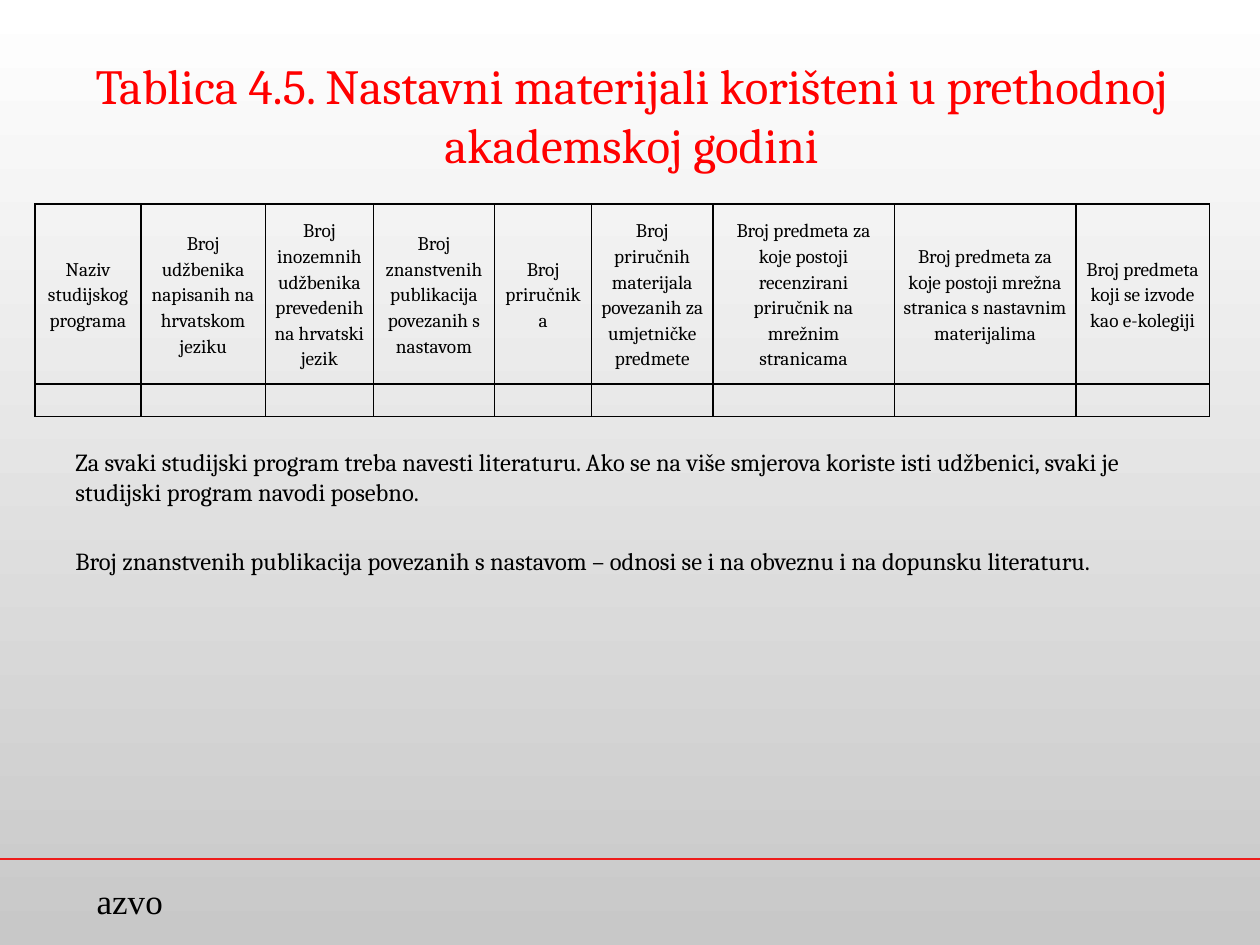
from lxml.etree import SubElement
from pptx import Presentation
from pptx.dml.color import RGBColor
from pptx.enum.shapes import MSO_CONNECTOR
from pptx.enum.text import MSO_ANCHOR as Anchor, PP_ALIGN as Align
from pptx.oxml.ns import qn
from pptx.util import Cm, Pt

COLORS = {
    "top": "FFFFFF",
    "bottom": "C8C8C8",
    "title": "FF0000",
    "rule": "EE1C1B",
    "text": "000000",
}
SERIF = "Cambria"
TITLE = "Tablica 4.5. Nastavni materijali korišteni u prethodnoj akademskoj godini"
COLUMNS = [
    ("Naziv studijskog programa", 2.13),
    ("Broj udžbenika napisanih na hrvatskom jeziku", 2.51),
    ("Broj inozemnih udžbenika prevedenih na hrvatski jezik", 2.18),
    ("Broj znanstvenih publikacija povezanih s nastavom", 2.44),
    ("Broj priručnika", 1.96),
    ("Broj priručnih materijala povezanih za umjetničke predmete", 2.44),
    ("Broj predmeta za koje postoji recenzirani priručnik na mrežnim stranicama", 3.66),
    ("Broj predmeta za koje postoji mrežna stranica s nastavnim materijalima", 3.66),
    ("Broj predmeta koji se izvode kao e-kolegiji", 2.69),
]
ROW_HEIGHTS = [3.63, 0.66]
NOTES = [
    "Za svaki studijski program treba navesti literaturu. Ako se na više smjerova "
    "koriste isti udžbenici, svaki je studijski program navodi posebno.",
    "Broj znanstvenih publikacija povezanih s nastavom – odnosi se i na obveznu "
    "i na dopunsku literaturu.",
]


def rgb(name):
    """Return the named colour."""
    return RGBColor.from_string(COLORS[name])


def style_font(font, size, color="text", face=SERIF):
    """Set size, colour and typeface of a font."""
    font.size, font.name = Pt(size), face
    font.color.rgb = rgb(color)


def paint_background(slide):
    """Fill the slide with a vertical gradient."""
    fill = slide.background.fill
    fill.gradient()
    fill.gradient_angle = 270
    for stop, name in zip(fill.gradient_stops, ("top", "bottom")):
        stop.color.rgb = rgb(name)


def add_text(slide, box, lines, size, color="text", face=SERIF,
             align=Align.LEFT, anchor=Anchor.TOP, gap=0, wrap=True):
    """Add a text box with one paragraph per line."""
    frame = slide.shapes.add_textbox(*map(Cm, box)).text_frame
    frame.word_wrap, frame.vertical_anchor = wrap, anchor
    frame.text = "\n".join(lines)
    for index, paragraph in enumerate(frame.paragraphs):
        paragraph.alignment = align
        if index:
            paragraph.space_before = Pt(gap)
        style_font(paragraph.font, size, color, face)


def add_rule(slide, y):
    """Add the footer line across the slide."""
    rule = slide.shapes.add_connector(MSO_CONNECTOR.STRAIGHT, 0, Cm(y), Cm(25.4), Cm(y))
    rule.line.color.rgb = rgb("rule")
    rule.line.width = Pt(1)
    SubElement(rule._element.spPr, qn("a:effectLst"))


def add_borders(cell):
    """Draw a thin line on each side of a cell."""
    properties = cell._tc.get_or_add_tcPr()
    for position, side in enumerate(("lnL", "lnR", "lnT", "lnB")):
        border = properties.makeelement(qn(f"a:{side}"), {"w": str(Pt(1))})
        fill = SubElement(border, qn("a:solidFill"))
        SubElement(fill, qn("a:srgbClr"), val=COLORS["text"])
        properties.insert(position, border)


def fill_cell(cell, text):
    """Write and format one table cell."""
    cell.text = text
    cell.fill.background()
    cell.vertical_anchor = Anchor.MIDDLE
    cell.margin_left = cell.margin_right = Cm(0.18)
    cell.margin_top = cell.margin_bottom = 0
    paragraph = cell.text_frame.paragraphs[0]
    paragraph.alignment = Align.CENTER
    paragraph.line_spacing = 1.15
    paragraph.space_after = Pt(10)
    style_font(paragraph.font, 11)
    add_borders(cell)


def add_materials_table(slide, left, top):
    """Add the table of teaching materials with an empty row to fill in."""
    width = sum(column_width for _, column_width in COLUMNS)
    table = slide.shapes.add_table(
        len(ROW_HEIGHTS), len(COLUMNS),
        Cm(left), Cm(top), Cm(width), Cm(sum(ROW_HEIGHTS))).table
    table.first_row = table.horz_banding = False
    for row, height in zip(table.rows, ROW_HEIGHTS):
        row.height = Cm(height)
    for index, (heading, column_width) in enumerate(COLUMNS):
        table.columns[index].width = Cm(column_width)
        fill_cell(table.cell(0, index), heading)
        fill_cell(table.cell(1, index), "")


def main():
    """Build and save the slide."""
    presentation = Presentation()
    presentation.slide_width, presentation.slide_height = Cm(25.4), Cm(19.05)
    slide = presentation.slides.add_slide(presentation.slide_layouts[6])
    paint_background(slide)
    add_rule(slide, 17.32)
    add_text(slide, (1.7, 17.6, 2.21, 1.09), ["azvo"], 20,
             face="Times New Roman", wrap=False)
    add_text(slide, (1.3, 0.71, 22.86, 3.18), [TITLE], 28, "title",
             align=Align.CENTER, anchor=Anchor.MIDDLE)
    add_text(slide, (1.27, 8.89, 22.86, 3.6), NOTES, 14, gap=23)
    add_materials_table(slide, 0.71, 4.11)
    presentation.save("out.pptx")


if __name__ == "__main__":
    main()
